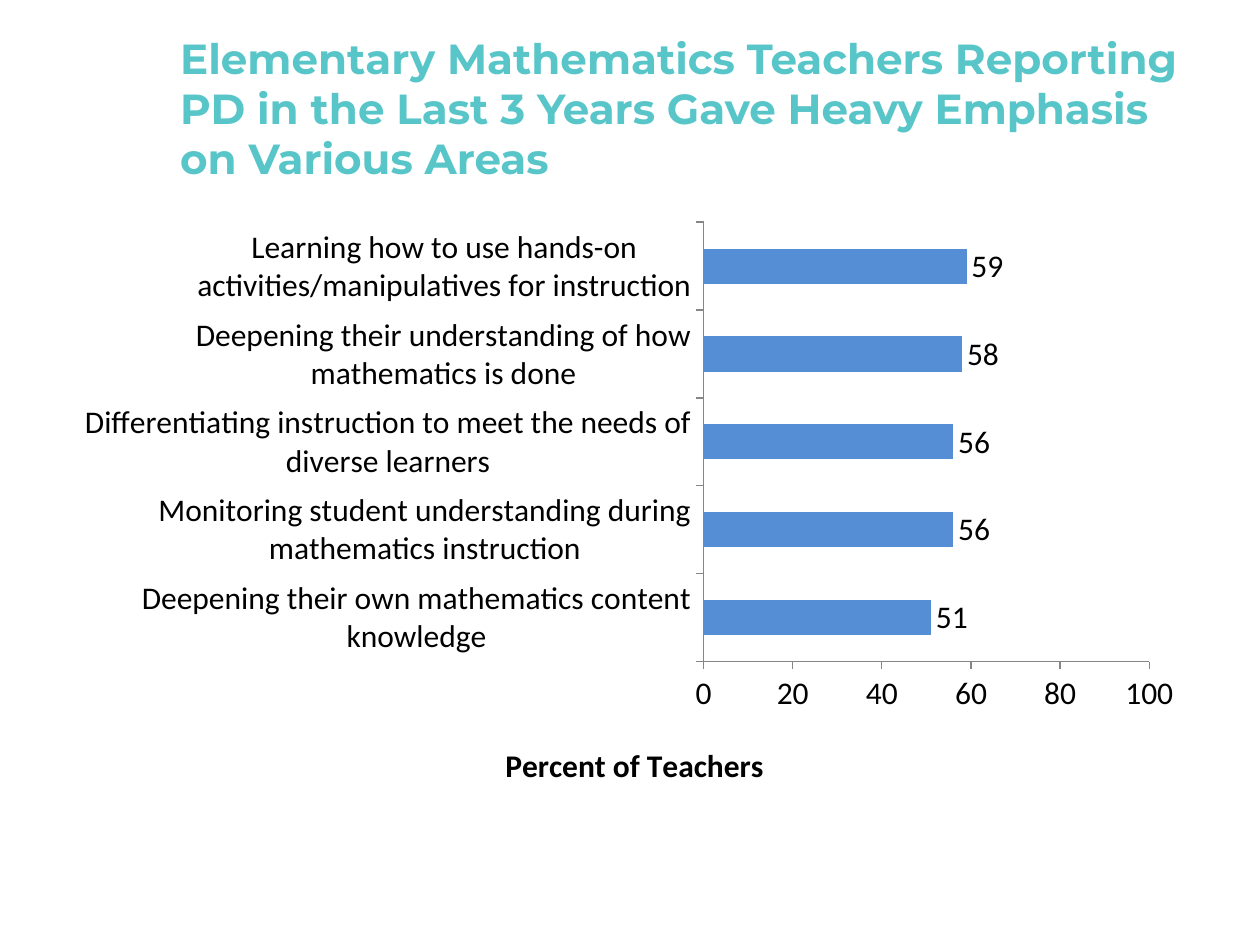
from lxml import etree
from pptx import Presentation
from pptx import util as u
from pptx.chart.data import CategoryChartData
from pptx.dml.color import RGBColor
from pptx.enum import chart as ch, text
from pptx.oxml.ns import qn

TEAL = RGBColor(0x58, 0xC5, 0xC9)
BLUE = RGBColor(0x55, 0x8E, 0xD5)
BLACK = RGBColor(0, 0, 0)
GRAY = RGBColor(0x86, 0x86, 0x86)

TITLE = ("Elementary Mathematics Teachers Reporting PD in the Last 3 Years "
         "Gave Heavy Emphasis on Various Areas")
AXIS = "Percent of Teachers"
AREAS = [
    ("Deepening their own mathematics content knowledge", 51),
    ("Monitoring student understanding during mathematics instruction", 56),
    ("Differentiating instruction to meet the needs of diverse learners", 56),
    ("Deepening their understanding of how mathematics is done", 58),
    ("Learning how to use hands-on activities/manipulatives for instruction", 59),
]
PLOT = {"xMode": "edge", "yMode": "edge", "x": 0.565, "y": 0.02, "w": 0.393, "h": 0.742}
NAME = {"xMode": "edge", "yMode": "edge", "x": 0.385, "y": 0.89}


def style(font, size=18, face="Calibri", color=BLACK, bold=False):
    font.size, font.name, font.bold = u.Pt(size), face, bold
    font.color.rgb = color


def write(frame, words, **look):
    para = frame.paragraphs[0]
    run = para.add_run()
    run.text = words
    style(run.font, **look)
    return para


def place(node, after, rules, inner=False):
    for old in node.findall(qn("c:layout")):
        node.remove(old)
    lay = etree.Element(qn("c:layout"))
    man = etree.SubElement(lay, qn("c:manualLayout"))
    if inner:
        etree.SubElement(man, qn("c:layoutTarget")).set("val", "inner")
    for key, val in rules.items():
        etree.SubElement(man, qn("c:" + key)).set("val", str(val))
    if after is None:
        node.insert(0, lay)
    else:
        after.addnext(lay)


def head(slide):
    box = slide.shapes.title
    box.left, box.top, box.width, box.height = map(u.Pt, (95.76, 27.36, 594, 68.4))
    frame = box.text_frame
    frame.word_wrap = True
    frame.auto_size = text.MSO_AUTO_SIZE.NONE
    frame.vertical_anchor = text.MSO_ANCHOR.MIDDLE
    para = write(frame, TITLE, size=24, face="Montserrat", color=TEAL, bold=True)
    para.alignment = text.PP_ALIGN.LEFT


def bars(slide):
    data = CategoryChartData()
    data.categories = [name for name, _ in AREAS]
    data.add_series("Series 1", [val for _, val in AREAS])
    chart = slide.shapes.add_chart(ch.XL_CHART_TYPE.BAR_CLUSTERED, u.Pt(36), u.Pt(120.24),
                                   u.Pt(648), u.Pt(338.4), data).chart
    style(chart.font)
    chart.has_legend = chart.has_title = False
    cat, val = chart.category_axis, chart.value_axis
    for axis in (cat, val):
        axis.has_major_gridlines = False
        axis.major_tick_mark = ch.XL_TICK_MARK.OUTSIDE
        axis.minor_tick_mark = ch.XL_TICK_MARK.NONE
        axis.format.line.color.rgb = GRAY
        axis.format.line.width = u.Pt(0.75)
        style(axis.tick_labels.font)
    val.minimum_scale, val.maximum_scale, val.major_unit = 0, 100, 20
    write(val.axis_title.text_frame, AXIS, bold=True)
    title = val.axis_title._element
    place(title, title.find(qn("c:tx")), NAME)
    place(chart._chartSpace.chart.plotArea, None, PLOT, inner=True)

    plot = chart.plots[0]
    plot.gap_width = 150
    plot.vary_by_categories = False
    row = plot.series[0]
    row.format.fill.solid()
    row.format.fill.fore_color.rgb = BLUE
    tags = row.data_labels
    tags.show_value = True
    tags.position = ch.XL_LABEL_POSITION.OUTSIDE_END
    style(tags.font)


def main():
    deck = Presentation()
    deck.slide_width, deck.slide_height = u.Pt(720), u.Pt(540)
    slide = deck.slides.add_slide(deck.slide_layouts[5])
    bars(slide)
    head(slide)
    deck.save("out.pptx")


if __name__ == "__main__":
    main()
